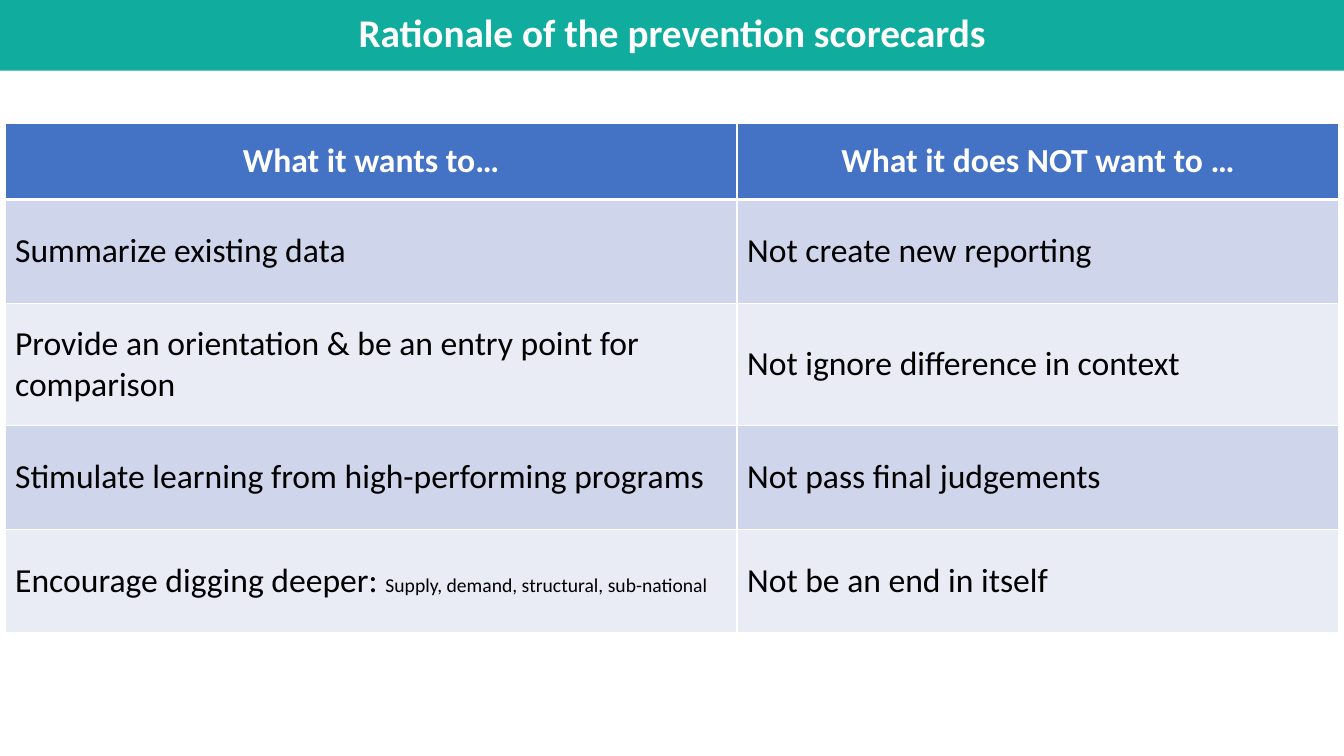
from dataclasses import dataclass

from lxml.etree import SubElement
from pptx import Presentation
from pptx.dml.color import RGBColor as RGB
from pptx.enum.text import MSO_ANCHOR as Anchor, MSO_AUTO_SIZE as Fit, PP_ALIGN as Align
from pptx.oxml.ns import qn
from pptx.util import Inches, Pt


@dataclass(frozen=True)
class Theme:
    font: str = "Calibri"
    white: str = "FFFFFF"
    black: str = "000000"
    teal: str = "10AC9D"
    blue: str = "4472C4"
    bands: tuple = ("CFD5EA", "E9EBF5")
    title: int = 28
    body: int = 24
    small: int = 14
    thin: int = 1
    thick: int = 3


class Deck:
    """Hold the theme and the current slide, and add elements to it."""

    def __init__(self, theme):
        self.theme = theme
        self.prs = Presentation()
        self.prs.slide_width, self.prs.slide_height = Inches(13.33), Inches(7.5)
        self.slide = self.prs.slides.add_slide(self.prs.slide_layouts[5])

    def paint(self, item, color):
        item.fill.solid()
        item.fill.fore_color.rgb = RGB.from_string(color)

    def style(self, para, size, color, bold, align):
        para.alignment = align
        font = para.font
        font.name, font.size, font.bold = self.theme.font, Pt(size), bold
        font.color.rgb = RGB.from_string(color)

    def title(self, text, height):
        shape = self.slide.shapes.title
        shape.left, shape.top = Inches(0), Inches(0)
        shape.width, shape.height = self.prs.slide_width, Inches(height)
        self.paint(shape, self.theme.teal)
        frame = shape.text_frame
        frame.text = text
        frame.word_wrap, frame.auto_size = True, Fit.NONE
        frame.vertical_anchor = Anchor.MIDDLE
        para = frame.paragraphs[0]
        para.line_spacing = 0.9
        self.style(para, self.theme.title, self.theme.white, True, Align.CENTER)

    def border(self, cell, side, width):
        props = cell._tc.get_or_add_tcPr()
        line = SubElement(props, qn(f"a:ln{side}"), w=str(Pt(width)))
        fill = SubElement(line, qn("a:solidFill"))
        SubElement(fill, qn("a:srgbClr"), val=self.theme.white)

    def cell(self, cell, row, parts):
        theme, head = self.theme, row == 0
        thick = {(0, "B"), (1, "T")}
        for side in "LRTB":
            self.border(cell, side, theme.thick if (row, side) in thick else theme.thin)
        self.paint(cell, theme.blue if head else theme.bands[(row - 1) % 2])
        cell.vertical_anchor = Anchor.MIDDLE
        para = cell.text_frame.paragraphs[0]
        main, *notes = parts
        para.add_run().text = main
        self.style(para, theme.body, theme.white if head else theme.black,
                   head, Align.CENTER if head else Align.LEFT)
        for note in notes:
            run = para.add_run()
            run.text = note
            run.font.size = Pt(theme.small)

    def table(self, left, top, widths, heights, rows):
        box = map(Inches, (left, top, sum(widths), sum(heights)))
        table = self.slide.shapes.add_table(len(heights), len(widths), *box).table
        for col, width in zip(table.columns, widths):
            col.width = Inches(width)
        for r, (height, texts) in enumerate(zip(heights, rows)):
            table.rows[r].height = Inches(height)
            for c, parts in enumerate(texts):
                self.cell(table.cell(r, c), r, parts)


ROWS = [
    (["What it wants to…"], ["What it does NOT want to …"]),
    (["Summarize existing data"], ["Not create new reporting"]),
    (["Provide an orientation & be an entry point for comparison"],
     ["Not ignore difference in context"]),
    (["Stimulate learning from high-performing programs"], ["Not pass final judgements"]),
    (["Encourage digging deeper: ", "Supply, demand, structural, sub-national"],
     ["Not be an end in itself"]),
]


def main():
    deck = Deck(Theme())
    deck.title("Rationale of the prevention scorecards", 0.7)
    deck.table(0.05, 1.22, [7.26, 5.97], [0.76, 1.03, 1.21, 1.03, 1.03], ROWS)
    deck.prs.save("out.pptx")


if __name__ == "__main__":
    main()
